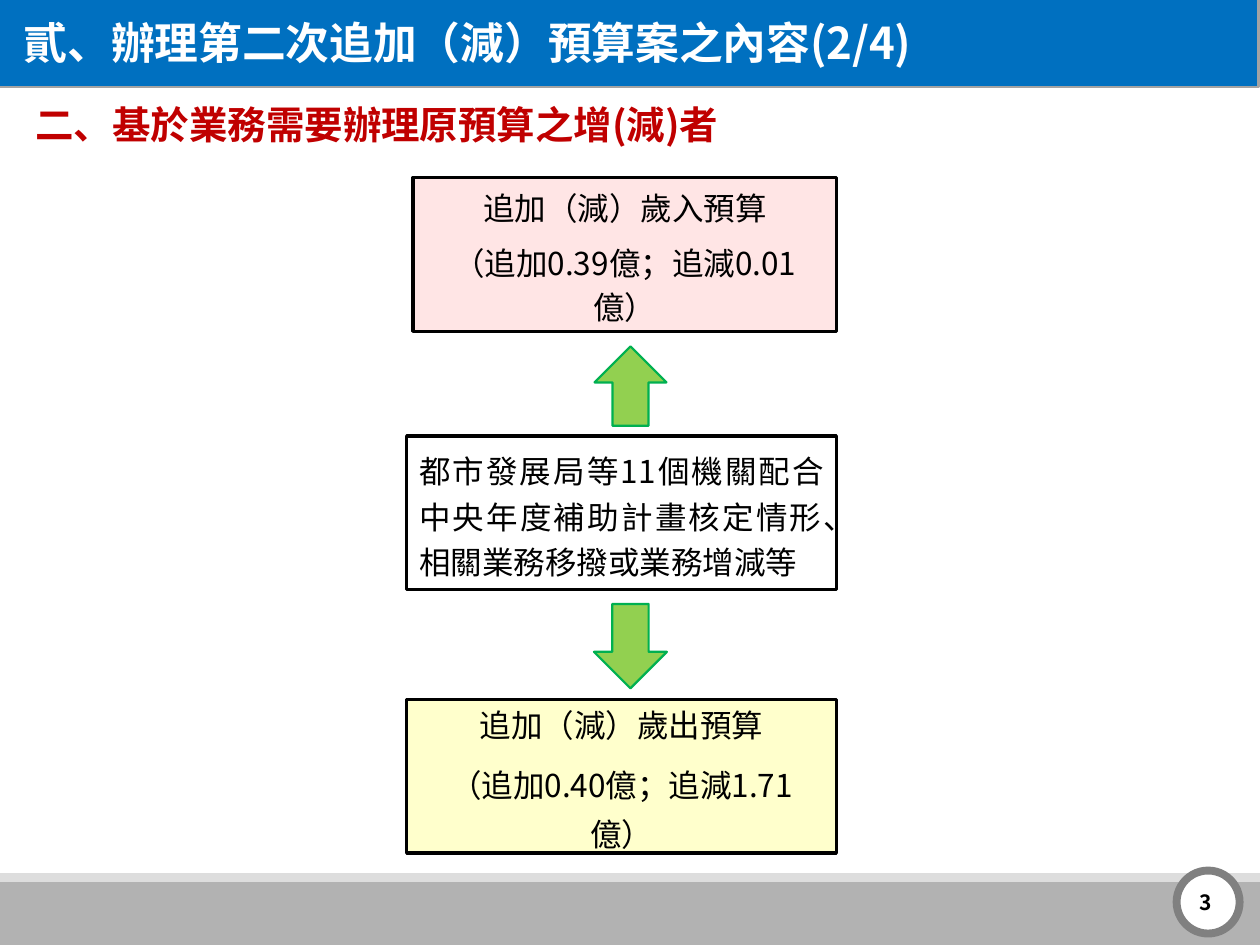
from lxml.etree import SubElement
from pptx import Presentation
from pptx.dml.color import RGBColor
from pptx.enum.shapes import MSO_SHAPE as Shape
from pptx.enum.text import MSO_ANCHOR as Anchor, MSO_AUTO_SIZE as AutoSize, PP_ALIGN as Align
from pptx.oxml.ns import qn
from pptx.util import Cm, Pt

FONT = "Noto Sans CJK SC"
COLORS = {
    "blue": "0070C0", "header_edge": "A3A3A3", "white": "FFFFFF", "black": "000000",
    "red": "C00000", "footer": "B2B2B2", "footer_edge": "DDDDDD", "ring": "808080",
    "pink": "FFE5E5", "yellow": "FFFFCC", "green": "92D050", "green_edge": "00B050",
}

# Content
TITLE = "貳、辦理第二次追加（減）預算案之內容(2/4)"
SUBTITLE = "二、基於業務需要辦理原預算之增(減)者"
PAGE_NUMBER = "3"
RIGHT_EDGE, BOX_HEIGHT = 16.86, 3.1
# left, top, fill, alignment, [(paragraph, line spacing in points)]
BOXES = [
    (8.33, 3.58, "pink", Align.CENTER,
     [("追加（減）歲入預算", 25), ("（追加0.39億；追減0.01億）", 25)]),
    (8.2, 8.79, None, Align.JUSTIFY,
     [("都市發展局等11個機關配合中央年度補助計畫核定情形、相關業務移撥或業務增減等", 26)]),
    (8.2, 14.1, "yellow", Align.CENTER,
     [("追加（減）歲出預算", 25), ("（追加0.40億；追減1.71億）", 28)]),
]
# left, top, length, breadth, rotation
ARROWS = [(11.91, 7.06, 1.6, 1.45, 90), (11.86, 12.29, 1.7, 1.47, 270)]
# left, top, width, height, fill, edge, edge width
BANDS = [
    (0, 17.78, 25.4, 1.27, "footer", None, 0),
    (0, 17.6, 25.4, 0.18, "footer_edge", None, 0),
    (-0.03, -0.03, 25.4, 1.78, "blue", "header_edge", 1.25),
]


def rgb(color):
    return RGBColor.from_string(COLORS[color])


def add_form(kind, left, top, width, height, fill=None, edge=None, edge_width=0):
    form = slide.shapes.add_shape(kind, Cm(left), Cm(top), Cm(width), Cm(height))
    form.shadow.inherit = False
    if fill:
        form.fill.solid()
        form.fill.fore_color.rgb = rgb(fill)
    else:
        form.fill.background()
    if edge:
        form.line.color.rgb = rgb(edge)
        form.line.width = Pt(edge_width)
    else:
        form.line.fill.background()
    return form


def write(form, lines, size, color, bold=False, align=Align.LEFT, anchor=Anchor.MIDDLE):
    frame = form.text_frame
    frame.word_wrap = True
    frame.vertical_anchor = anchor
    frame.text = "\n".join(lines)
    for paragraph in frame.paragraphs:
        paragraph.alignment = align
        for run in paragraph.runs:
            font = run.font
            font.size, font.bold = Pt(size), bold
            font.color.rgb = rgb(color)
            font.name = FONT
            # East Asian typeface
            SubElement(font._element, qn("a:ea")).set("typeface", FONT)
    return frame


prs = Presentation()
prs.slide_width, prs.slide_height = Cm(25.4), Cm(19.05)
slide = prs.slides.add_slide(prs.slide_layouts[6])

# Header and footer bands
for band in BANDS:
    add_form(Shape.RECTANGLE, *band)

# Title with hanging indent
title = add_form(Shape.RECTANGLE, 0.23, 0.2, 24.77, 1.32, "blue")
title_frame = write(title, [TITLE], 25, "white", True, anchor=Anchor.TOP)
title_frame.auto_size = AutoSize.SHAPE_TO_FIT_TEXT
indent = title_frame.paragraphs[0]._p.get_or_add_pPr()
indent.set("marL", str(Cm(2.24)))
indent.set("indent", str(-Cm(2.24)))

# Page number badge
add_form(Shape.OVAL, 23.72, 17.55, 1.27, 1.27, "white", "ring", 4.5)
page_number = slide.shapes.add_textbox(Cm(21.95), Cm(17.81), Cm(2.74), Cm(0.76))
write(page_number, [PAGE_NUMBER], 12, "black", True, Align.RIGHT)

# Subtitle
subtitle = add_form(Shape.ROUND_2_DIAG_RECTANGLE, 0.41, 1.93, 16.46, 1.22)
subtitle_frame = write(subtitle, [SUBTITLE], 22, "red", True, anchor=Anchor.TOP)
subtitle_frame.auto_size = AutoSize.SHAPE_TO_FIT_TEXT
subtitle_frame.paragraphs[0].line_spacing = Pt(24)
subtitle_frame.paragraphs[0].space_after = Pt(6)

# Budget boxes
for left, top, fill, align, lines in BOXES:
    box = add_form(Shape.RECTANGLE, left, top, RIGHT_EDGE - left, BOX_HEIGHT, fill, "black", 2)
    frame = write(box, [text for text, _ in lines], 18, "black", align=align)
    for index, (paragraph, (_, spacing)) in enumerate(zip(frame.paragraphs, lines)):
        paragraph.line_spacing = Pt(spacing)
        paragraph.space_before = Pt(6 * index)

# Arrows from the middle box to the outer ones
for *place, rotation in ARROWS:
    arrow = add_form(Shape.LEFT_ARROW, *place, "green", "green_edge", 1.25)
    arrow.rotation = rotation

prs.save("out.pptx")
